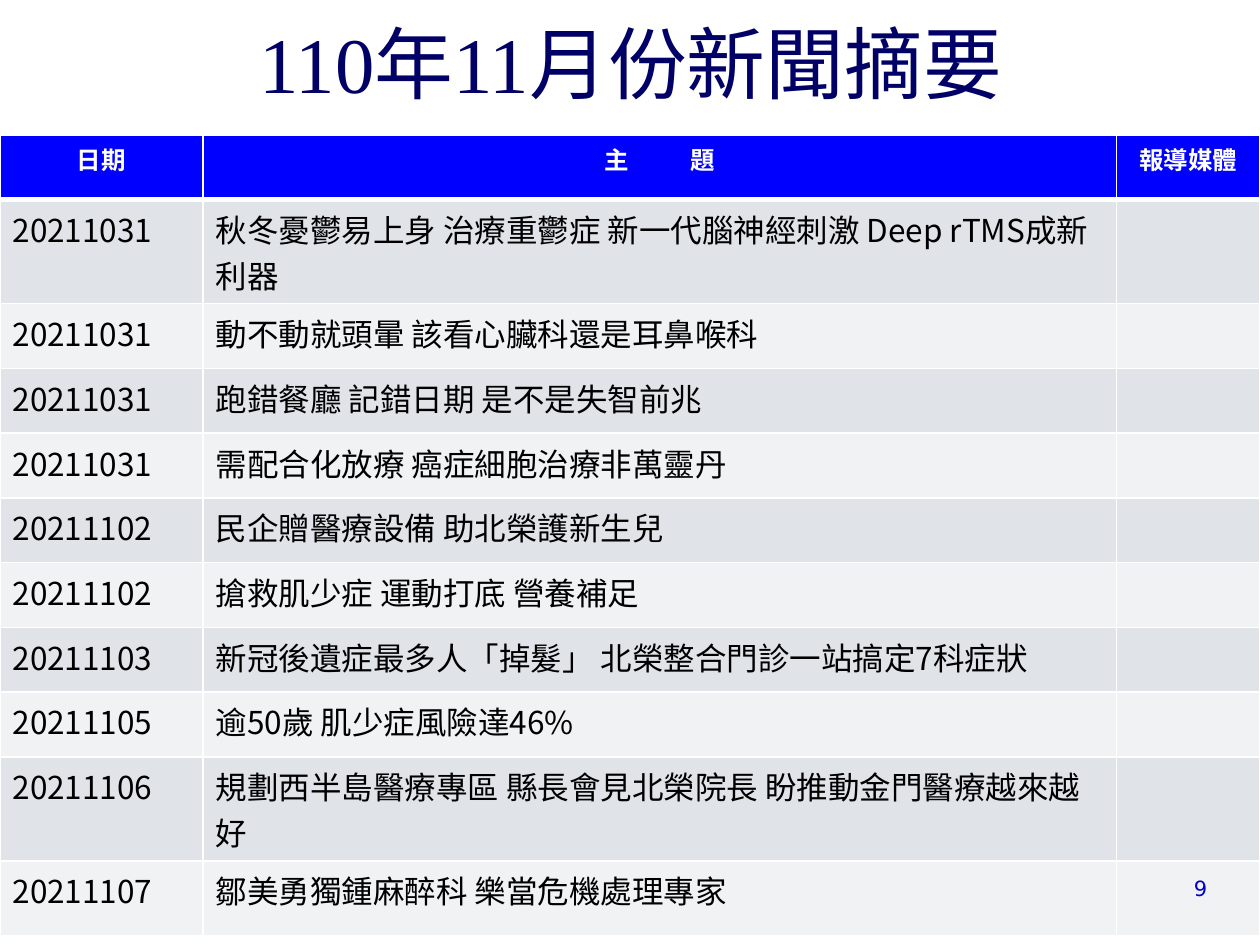
import pptx
import pptx.dml.color
import pptx.enum.text
import pptx.oxml
import pptx.oxml.ns
import pptx.util
from lxml import etree

COLORS = {
    "title": "000066",
    "header": "0000FF",
    "white": "FFFFFF",
    "text": "000000",
    "bands": ("E0E4E9", "F0F2F4"),
    "number": "0000CC",
}
CJK = "Noto Sans CJK SC"
# Table grid in points: one-line, two-line and last rows.
COLUMN_WIDTHS = (116, 522, 82)
ONE_LINE, TWO_LINES, LAST = 37, 59.5, 43
ROW_HEIGHTS = (ONE_LINE, TWO_LINES, *(ONE_LINE,) * 7, TWO_LINES, LAST)
NEWS = (
    ("20211031", "秋冬憂鬱易上身 治療重鬱症 新一代腦神經刺激 Deep rTMS成新利器"),
    ("20211031", "動不動就頭暈 該看心臟科還是耳鼻喉科"),
    ("20211031", "跑錯餐廳 記錯日期 是不是失智前兆"),
    ("20211031", "需配合化放療 癌症細胞治療非萬靈丹"),
    ("20211102", "民企贈醫療設備 助北榮護新生兒"),
    ("20211102", "搶救肌少症 運動打底 營養補足"),
    ("20211103", "新冠後遺症最多人「掉髮」 北榮整合門診一站搞定7科症狀"),
    ("20211105", "逾50歲 肌少症風險達46%"),
    ("20211106", "規劃西半島醫療專區 縣長會見北榮院長 盼推動金門醫療越來越好"),
    ("20211107", "鄒美勇獨鍾麻醉科 樂當危機處理專家"),
)
ALIGN = pptx.enum.text.PP_ALIGN


def rgb(color):
    return pptx.dml.color.RGBColor.from_string(color)


def add_run(p, text, size, color, font=CJK, bold=False, spacing=0):
    """Add a run; spacing is extra points after each character."""
    r = p.add_run()
    r.text = text
    r.font.size = pptx.util.Pt(size)
    r.font.bold = bold
    r.font.color.rgb = rgb(color)
    r.font.name = font
    rPr = r.font._element
    etree.SubElement(rPr, pptx.oxml.ns.qn("a:ea")).set("typeface", CJK)
    if spacing:
        rPr.set("spc", str(spacing * 100))


def add_text(slide, box, text, size, color, font, align, anchor):
    sp = slide.shapes.add_textbox(*(pptx.util.Inches(v) for v in box))
    tf = sp.text_frame
    tf.word_wrap = True
    tf.vertical_anchor = anchor
    p = tf.paragraphs[0]
    p.alignment = align
    add_run(p, text, size, color, font)


def style_cell(cell, fill, top=1, bottom=1):
    """Give a cell its white borders (widths in points) and its fill."""
    tcPr = cell._tc.get_or_add_tcPr()
    for side, width in (("L", 1), ("R", 1), ("T", top), ("B", bottom)):
        tcPr.append(pptx.oxml.parse_xml(
            f'<a:ln{side} {pptx.oxml.ns.nsdecls("a")} w="{pptx.util.Pt(width)}">'
            f'<a:solidFill><a:srgbClr val="{COLORS["white"]}"/></a:solidFill>'
            f'</a:ln{side}>'))
    cell.fill.solid()
    cell.fill.fore_color.rgb = rgb(fill)


def fill_header(table):
    # Letter spacing opens the gap inside the middle heading.
    headings = ([("日期", 0)], [("主 ", 16), ("題", 0)], [("報導媒體", 0)])
    for cell, parts in zip(table.rows[0].cells, headings):
        style_cell(cell, COLORS["header"], bottom=3)
        p = cell.text_frame.paragraphs[0]
        p.alignment = ALIGN.CENTER
        for text, spacing in parts:
            add_run(p, text, 14, COLORS["white"], bold=True, spacing=spacing)


def fill_news(table):
    for i, news in enumerate(NEWS):
        cells = list(table.rows[i + 1].cells)
        for cell in cells:
            style_cell(cell, COLORS["bands"][i % 2], top=3 if i == 0 else 1)
        for cell, text in zip(cells, news):
            add_run(cell.text_frame.paragraphs[0], text, 18, COLORS["text"])


def add_news_table(slide):
    pt = pptx.util.Pt
    table = slide.shapes.add_table(
        len(ROW_HEIGHTS), len(COLUMN_WIDTHS), 0, pptx.util.Inches(1.07),
        pt(sum(COLUMN_WIDTHS)), pt(sum(ROW_HEIGHTS))).table
    for column, width in zip(table.columns, COLUMN_WIDTHS):
        column.width = pt(width)
    for row, height in zip(table.rows, ROW_HEIGHTS):
        row.height = pt(height)
    fill_header(table)
    fill_news(table)


def main():
    prs = pptx.Presentation()
    prs.slide_width = pptx.util.Inches(10)
    prs.slide_height = pptx.util.Inches(7.5)
    slide = prs.slides.add_slide(prs.slide_layouts[6])
    anchor = pptx.enum.text.MSO_ANCHOR
    add_text(slide, (0.63, 0.34, 8.75, 0.58), "110年11月份新聞摘要", 45,
             COLORS["title"], "Times New Roman", ALIGN.CENTER, anchor.BOTTOM)
    add_news_table(slide)
    add_text(slide, (8.94, 6.9, 0.74, 0.3), "9", 12,
             COLORS["number"], "DejaVu Sans", ALIGN.RIGHT, anchor.TOP)
    prs.save("out.pptx")


if __name__ == "__main__":
    main()
